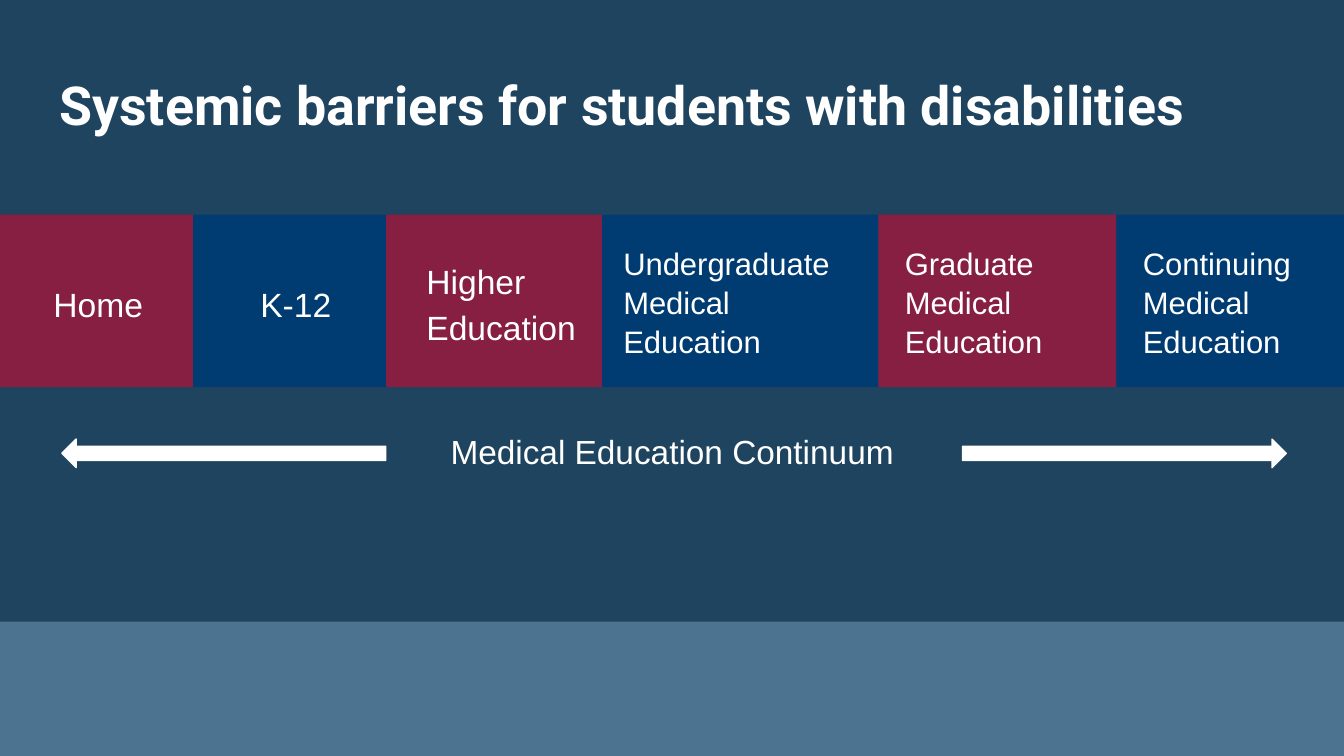
from pptx import Presentation, util as u
from pptx.dml.color import RGBColor
from pptx.enum import shapes, text
from pptx.oxml.ns import qn
from lxml import etree

MAROON, NAVY, WHITE = "861F41", "003C71", "FFFFFF"
STAGES = [
    ("Home", 3.65, MAROON, 0.76, 18, 1.15),
    ("K-12", 3.65, NAVY, 1.02, 18, 1.15),
    ("Higher Education", 4.08, MAROON, 0.51, 18, 1.15),
    ("Undergraduate Medical Education", 5.22, NAVY, 0.15, 16.6, 1.05),
    ("Graduate Medical Education", 4.5, MAROON, 0.25, 16.6, 1.05),
    ("Continuing Medical Education", 4.3, NAVY, 0.25, 16.6, 1.05),
]


def paint(color_format, color):
    """Apply a hex colour to a fill, a line or a font."""
    if hasattr(color_format, "solid"):
        color_format.solid()
        color_format.fore_color.rgb = RGBColor.from_string(color)
    else:
        color_format.color.rgb = RGBColor.from_string(color)


def write(shape, wording, size, font="Arial", bold=False, spacing=1.0, after=0,
          indent=0, align=text.PP_ALIGN.LEFT, anchor=text.MSO_ANCHOR.TOP):
    """Write one white paragraph into a shape."""
    frame = shape.text_frame
    frame.word_wrap = True
    frame.vertical_anchor = anchor
    frame.margin_left = frame.margin_right = u.Cm(0.25)
    frame.margin_top = frame.margin_bottom = u.Cm(0.25)
    paragraph = frame.paragraphs[0]
    paragraph.alignment = align
    paragraph.line_spacing = spacing
    paragraph.space_after = u.Pt(after)
    paragraph._p.get_or_add_pPr().set("marL", str(u.Cm(indent)))
    run = paragraph.add_run()
    run.text = wording
    run.font.name, run.font.size, run.font.bold = font, u.Pt(size), bold
    paint(run.font, WHITE)


def add_block(slide, kind, box, color):
    """Add a filled shape without outline or shadow."""
    block = slide.shapes.add_shape(kind, *map(u.Cm, box))
    block.shadow.inherit = False
    paint(block.fill, color)
    block.line.fill.background()
    return block


def add_footer(slide, box):
    """Add the translucent band at the foot of the slide."""
    band = add_block(slide, shapes.MSO_SHAPE.RECTANGLE, box, "ABDAFC")
    tint = band.fill._xPr.find(qn("a:solidFill"))[0]
    etree.SubElement(tint, qn("a:alpha"), val="32000")


def add_title(slide, box):
    """Add the slide title."""
    title = slide.shapes.add_textbox(*map(u.Cm, box))
    write(title, "Systemic barriers for students with disabilities", 28.8,
          font="Roboto", bold=True, spacing=0.9)


def add_stages(slide, box):
    """Lay the education stages side by side across the box."""
    left, top, width, height = box
    scale = width / sum(stage[1] for stage in STAGES)
    for wording, share, color, indent, size, spacing in STAGES:
        stage = add_block(slide, shapes.MSO_SHAPE.RECTANGLE,
                          (left, top, share * scale, height), color)
        write(stage, wording, size, spacing=spacing, after=12, indent=indent,
              anchor=text.MSO_ANCHOR.MIDDLE)
        left += share * scale


def add_continuum(slide, box):
    """Add the continuum label with an outward arrow on each side."""
    left, top, width, height = box
    label = slide.shapes.add_textbox(*map(u.Cm, box))
    write(label, "Medical Education Continuum", 17.9, spacing=0.95, after=12,
          align=text.PP_ALIGN.CENTER)
    length, inset = 6.12, 0.3
    ends = [(left + inset, 0), (left + width - inset + 0.07 - length, 180)]
    for start, rotation in ends:
        arrow = add_block(slide, shapes.MSO_SHAPE.LEFT_ARROW,
                          (start, top + 0.35, length, 0.54), WHITE)
        arrow.rotation = rotation
        paint(arrow.line, WHITE)
        arrow.line.width = u.Pt(0.75)


def main():
    """Build and save the slide."""
    deck = Presentation()
    deck.slide_width, deck.slide_height = u.Cm(25.4), u.Cm(14.29)
    slide = deck.slides.add_slide(deck.slide_layouts[6])
    paint(slide.background.fill, "1F445F")
    add_footer(slide, (0, 11.75, 25.4, 2.54))
    add_title(slide, (0.87, 1.24, 23.67, 1.6))
    add_stages(slide, (0, 4.06, 25.4, 3.26))
    add_continuum(slide, (0.87, 7.95, 23.67, 1.7))
    deck.save("out.pptx")


if __name__ == "__main__":
    main()
